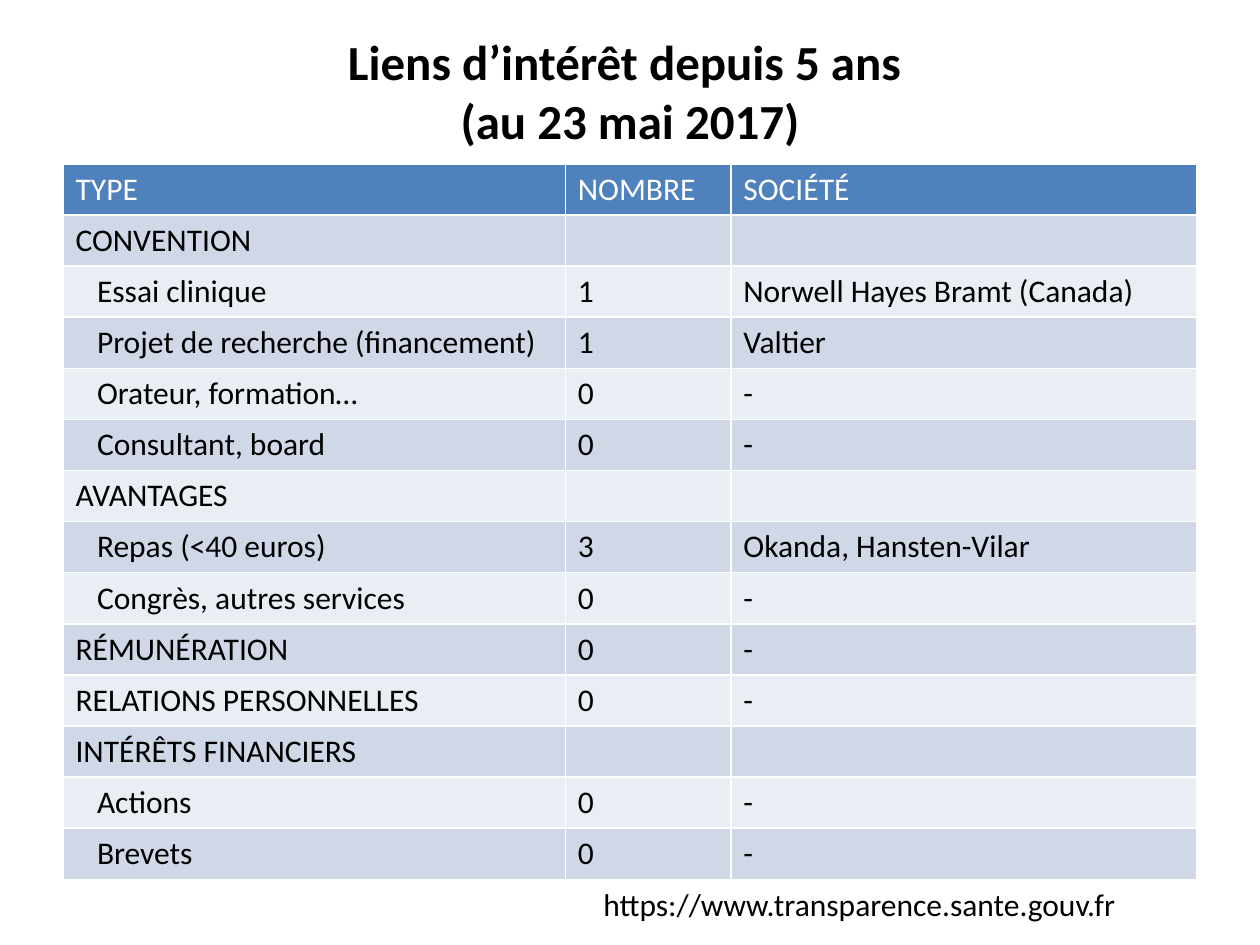
"""Build a slide listing declared interests over five years."""
import pptx
import pptx.util
import pptx.dml.color
import pptx.enum.text

BLACK = pptx.dml.color.RGBColor(0x00, 0x00, 0x00)
WHITE = pptx.dml.color.RGBColor(0xFF, 0xFF, 0xFF)
HEADER = pptx.dml.color.RGBColor(0x4F, 0x81, 0xBD)
BAND_DARK = pptx.dml.color.RGBColor(0xD0, 0xD8, 0xE8)
BAND_LIGHT = pptx.dml.color.RGBColor(0xE9, 0xED, 0xF4)
FONT = "Calibri"
INDENT = pptx.util.Inches(0.17)

ROWS = [
    (0, "TYPE", "NOMBRE", "SOCIÉTÉ"),
    (0, "CONVENTION", "", ""),
    (1, "Essai clinique", "1", "Norwell Hayes Bramt (Canada)"),
    (1, "Projet de recherche (financement)", "1", "Valtier"),
    (1, "Orateur, formation…", "0", "-"),
    (1, "Consultant, board", "0", "-"),
    (0, "AVANTAGES", "", ""),
    (1, "Repas (<40 euros)", "3", "Okanda, Hansten-Vilar"),
    (1, "Congrès, autres services", "0", "-"),
    (0, "RÉMUNÉRATION", "0", "-"),
    (0, "RELATIONS PERSONNELLES", "0", "-"),
    (0, "INTÉRÊTS FINANCIERS", "", ""),
    (1, "Actions", "0", "-"),
    (1, "Brevets", "0", "-"),
]


def add_run(paragraph, text, size, color, bold=False):
    run = paragraph.add_run()
    run.text = text
    run.font.name = FONT
    run.font.size = pptx.util.Pt(size)
    run.font.bold = bold
    run.font.color.rgb = color


presentation = pptx.Presentation()
presentation.slide_width = pptx.util.Inches(10)
presentation.slide_height = pptx.util.Inches(7.5)
width, height = presentation.slide_width, presentation.slide_height
slide = presentation.slides.add_slide(presentation.slide_layouts[6])
margin = int(width * 0.05)
content_width = width - 2 * margin

title = slide.shapes.add_textbox(margin, int(height * 0.012), content_width, int(height / 6))
title.text_frame.word_wrap = True
title.text_frame.vertical_anchor = pptx.enum.text.MSO_ANCHOR.MIDDLE
paragraph = title.text_frame.paragraphs[0]
paragraph.alignment = pptx.enum.text.PP_ALIGN.CENTER
add_run(paragraph, "Liens d’intérêt depuis 5 ans ", 28, BLACK, True)
paragraph.add_line_break()
add_run(paragraph, "(au 23 mai 2017)", 28, BLACK, True)

table_top = int(height * 0.1735)
table_height = int(height * 0.757)
table = slide.shapes.add_table(
    len(ROWS), 3, margin, table_top, content_width, table_height
).table
for column, share in zip(table.columns, (0.443, 0.146, 0.411)):
    column.width = int(content_width * share)

for row_index, (level, *texts) in enumerate(ROWS):
    is_header = row_index == 0
    band = BAND_DARK if row_index % 2 else BAND_LIGHT
    for column_index, text in enumerate(texts):
        cell = table.cell(row_index, column_index)
        cell.fill.solid()
        cell.fill.fore_color.rgb = HEADER if is_header else band
        paragraph = cell.text_frame.paragraphs[0]
        if text:
            add_run(paragraph, text, 18, WHITE if is_header else BLACK)
        else:
            paragraph.font.size = pptx.util.Pt(18)
        if level and column_index == 0:
            paragraph_properties = paragraph._p.get_or_add_pPr()
            paragraph_properties.set("marL", str(INDENT))
            paragraph_properties.set("indent", "0")

address = slide.shapes.add_textbox(
    int(width * 0.469), int(height * 0.93), int(width * 0.5), int(height * 0.054)
)
address.text_frame.word_wrap = True
add_run(address.text_frame.paragraphs[0], "https://www.transparence.sante.gouv.fr", 18, BLACK)

presentation.save("out.pptx")
